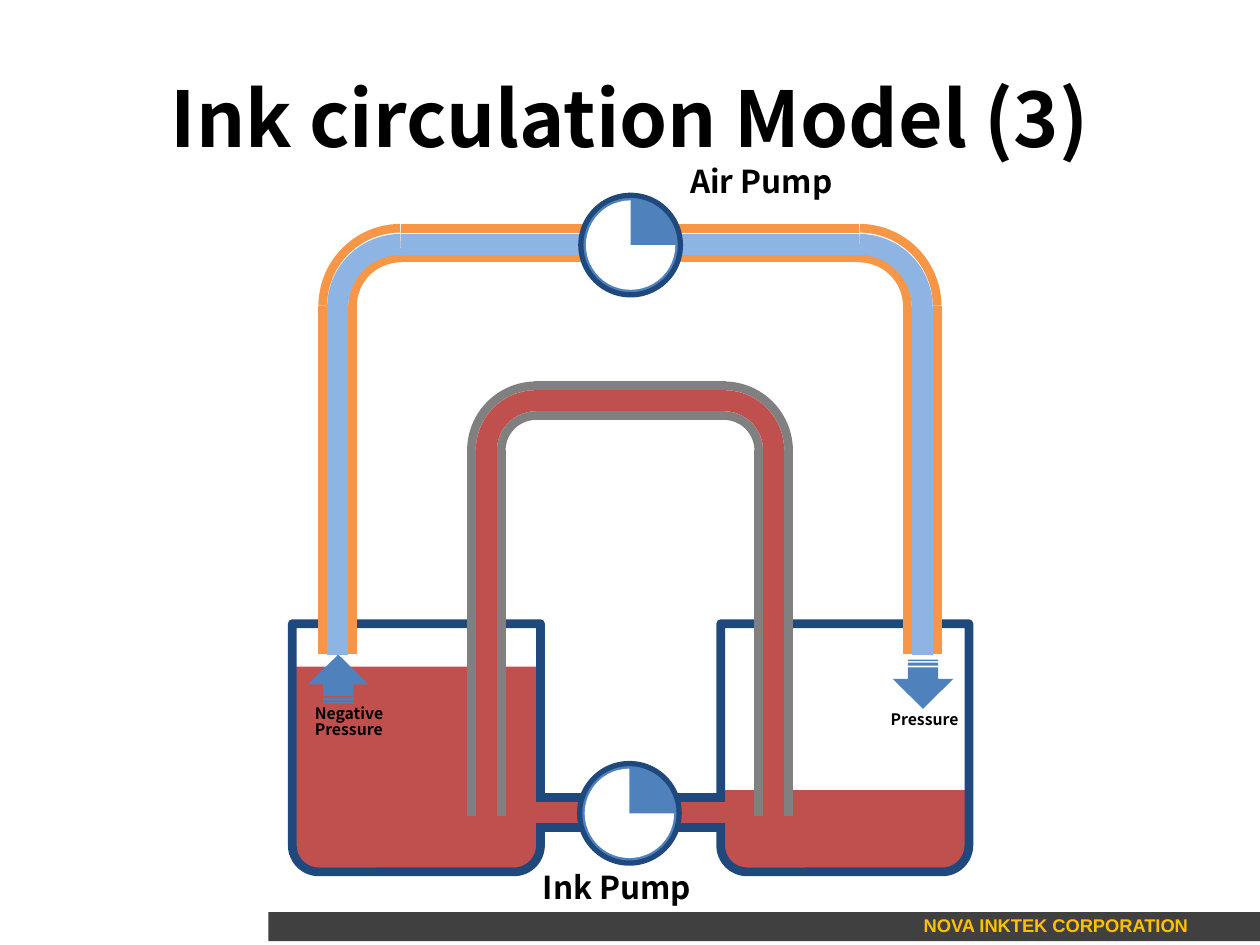
from dataclasses import dataclass

from lxml.etree import SubElement
from pptx import Presentation
from pptx.dml.color import RGBColor as Rgb
from pptx.enum.shapes import MSO_CONNECTOR as Conn, MSO_SHAPE as Kind
from pptx.enum.text import MSO_ANCHOR as Anchor, PP_ALIGN as Align
from pptx.oxml.ns import qn
from pptx.util import Inches, Pt


@dataclass(frozen=True)
class Theme:
    """Hold the colours, fonts and type sizes."""
    black: str = "000000"
    white: str = "FFFFFF"
    navy: str = "1F497D"
    blue: str = "4F81BD"
    air: str = "8EB4E3"
    ink: str = "C0504D"
    hose: str = "F79646"
    gray: str = "808080"
    bar: str = "404040"
    gold: str = "FFC000"
    font: str = "Noto Sans CJK JP"
    foot: str = "Arial"
    title: float = 44
    label: float = 18
    note: float = 9
    small: float = 10.5


T = Theme()


def shape(slide, kind, box, fill=None, line=None, width=1, adj=(), turn=0):
    """Add a preset shape with a plain fill and line."""
    item = slide.shapes.add_shape(kind, *map(Inches, box))
    item.shadow.inherit = False
    item.rotation = turn
    for i, value in enumerate(adj):
        item.adjustments[i] = value
    if fill:
        item.fill.solid()
        item.fill.fore_color.rgb = Rgb.from_string(fill)
    else:
        item.fill.background()
    if line:
        item.line.color.rgb = Rgb.from_string(line)
        item.line.width = Pt(width)
    else:
        item.line.fill.background()


def stroke(slide, start, end, color, width):
    """Add a straight line without a shadow."""
    item = slide.shapes.add_connector(
        Conn.STRAIGHT, *map(Inches, (*start, *end)))
    item.line.color.rgb = Rgb.from_string(color)
    item.line.width = Pt(width)
    SubElement(item._element.spPr, qn("a:effectLst"))


def text(slide, box, lines, size, font=T.font, color=T.black,
         align=Align.LEFT, space=0.83, wrap=False, anchor=Anchor.TOP):
    """Add a bold text box with one run per line."""
    frame = slide.shapes.add_textbox(*map(Inches, box)).text_frame
    frame.word_wrap = wrap
    frame.vertical_anchor = anchor
    for i, words in enumerate(lines):
        para = frame.add_paragraph() if i else frame.paragraphs[0]
        para.alignment = align
        para.line_spacing = space
        run = para.add_run()
        run.text = words
        run.font.name = font
        run.font.size = Pt(size)
        run.font.bold = True
        run.font.color.rgb = Rgb.from_string(color)


def pipe(slide, left, right, top, base, bend, spans, color, width):
    """Add an arched pipe with two round bends."""
    half = bend / 2
    for x, adj in ((left, (108, 162)), (right - bend, (162, 0))):
        shape(slide, Kind.ARC, (x, top, bend, bend), line=color,
              width=width, adj=adj)
    for start, end in spans:
        stroke(slide, (start, top), (end, top), color, width)
    for x in (left, right):
        stroke(slide, (x, top + half), (x, base), color, width)


def tank(slide, left):
    """Add the open outline of a tank."""
    shape(slide, Kind.ROUND_2_SAME_RECTANGLE, (left, 4.95, 1.97, 1.97),
          line=T.navy, width=5, adj=(0, 0.107))


def pool(slide, left):
    """Add the ink in the round base of a tank."""
    shape(slide, Kind.ROUND_2_SAME_RECTANGLE, (left, 5.66, 1.93, 1.24),
          fill=T.ink, adj=(0, 0.124))


def pump(slide, left, top):
    """Add a pump dial with one blue quarter."""
    shape(slide, Kind.OVAL, (left, top, 0.79, 0.79), T.blue, T.navy, 3)
    shape(slide, Kind.PIE, (left + 0.04, top + 0.04, 0.71, 0.71),
          T.white, adj=(0, 162))


def arrow(slide, left, top, turn):
    """Add a striped arrow turned up or down."""
    shape(slide, Kind.STRIPED_RIGHT_ARROW, (left, top, 0.39, 0.48),
          T.blue, adj=(0.5, 0.606), turn=turn)


def footer(slide):
    """Add the dark bar and the maker's name."""
    shape(slide, Kind.RECTANGLE, (2.13, 7.24, 7.87, 0.23), T.bar)
    text(slide, (7.13, 7.21, 2.4, 0.28), ["NOVA INKTEK CORPORATION"],
         T.small, T.foot, T.gold, Align.RIGHT, 1)


def main():
    """Build and save the slide."""
    deck = Presentation()
    deck.slide_width, deck.slide_height = Inches(10), Inches(7.5)
    slide = deck.slides.add_slide(deck.slide_layouts[6])
    footer(slide)
    shape(slide, Kind.RECTANGLE, (2.35, 5.29, 1.92, 0.45), T.ink)
    for left in (2.35, 5.74):
        pool(slide, left)
    shape(slide, Kind.RECTANGLE, (5.74, 5.56, 1.93, 0.71), T.white)
    for left in (2.32, 5.72):
        tank(slide, left)
    text(slide, (0.5, 0.3, 9, 1.25), ["Ink circulation Model (3)"], T.title,
         align=Align.CENTER, space=1, wrap=True, anchor=Anchor.MIDDLE)

    spans = ((3.18, 4.75), (5.25, 6.82))
    for color, width, top, base in ((T.hose, 22, 1.93, 5.19),
                                    (T.white, 12, 1.93, 5.2),
                                    (T.air, 12, 1.94, 5.2)):
        pipe(slide, 2.68, 7.32, top, base, 1, spans, color, width)
    pump(slide, 4.61, 1.55)
    arrow(slide, 2.49, 5.15, 270)
    text(slide, (2.4, 5.56, 0.79, 0.4), ["Negative", "Pressure"], T.note)
    arrow(slide, 7.13, 5.19, 90)
    text(slide, (6.97, 5.61, 0.79, 0.25), ["Pressure"], T.note)

    for color, width in ((T.gray, 22), (T.white, 12), (T.ink, 12)):
        pipe(slide, 3.86, 6.14, 3.18, 6.48, 0.79, [(4.24, 5.76)],
             color, width)
    for y, color, width in ((6.33, T.navy, 5), (6.45, T.white, 12),
                            (6.57, T.navy, 5)):
        stroke(slide, (4.26, y), (5.75, y), color, width)
    stroke(slide, (4.21, 6.45), (5.79, 6.45), T.ink, 12)
    pump(slide, 4.6, 6.06)
    text(slide, (5.38, 1.29, 1.44, 0.4), ["Air Pump"], T.label)
    text(slide, (4.21, 6.89, 1.51, 0.4), ["Ink Pump"], T.label)
    deck.save("out.pptx")


if __name__ == "__main__":
    main()
